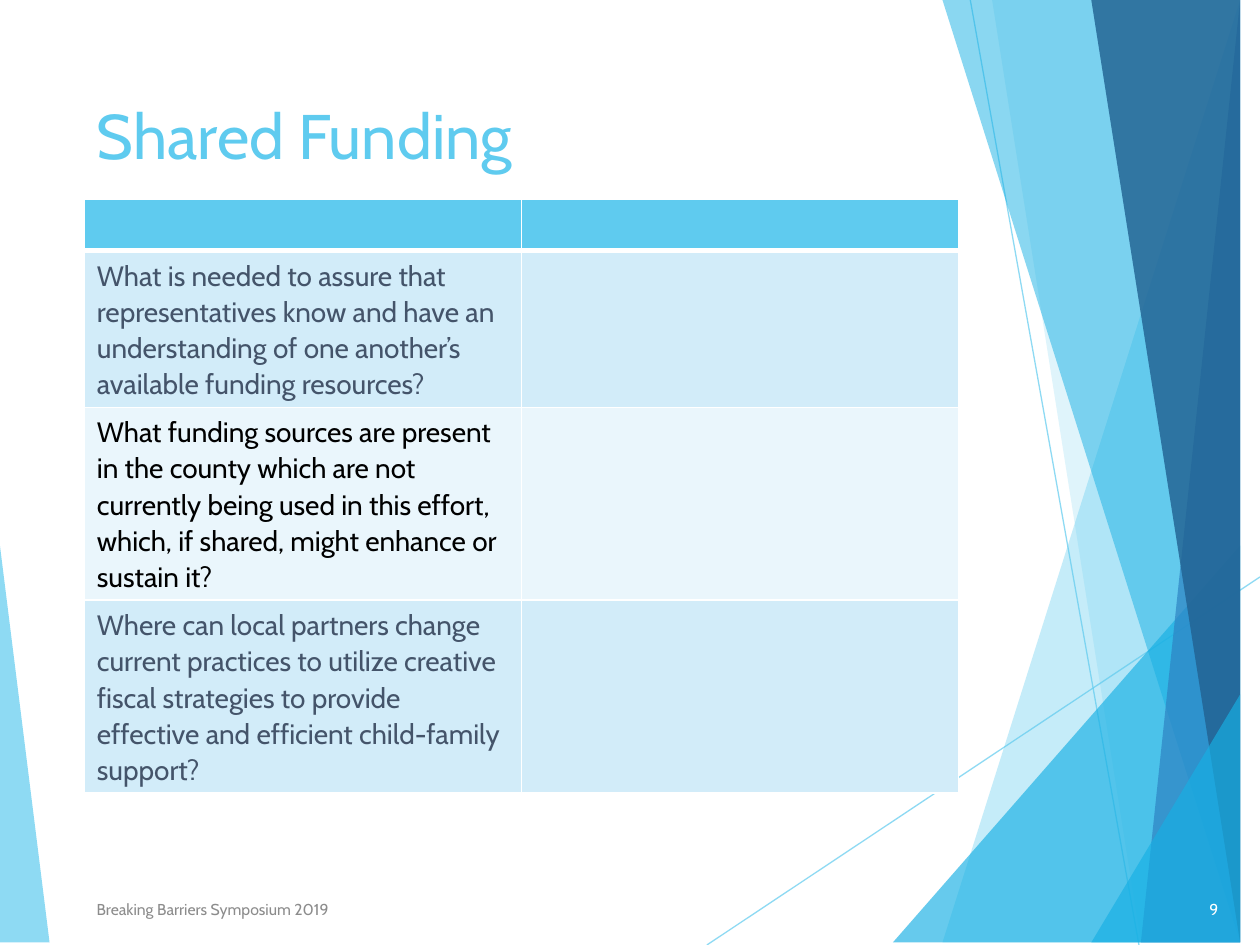
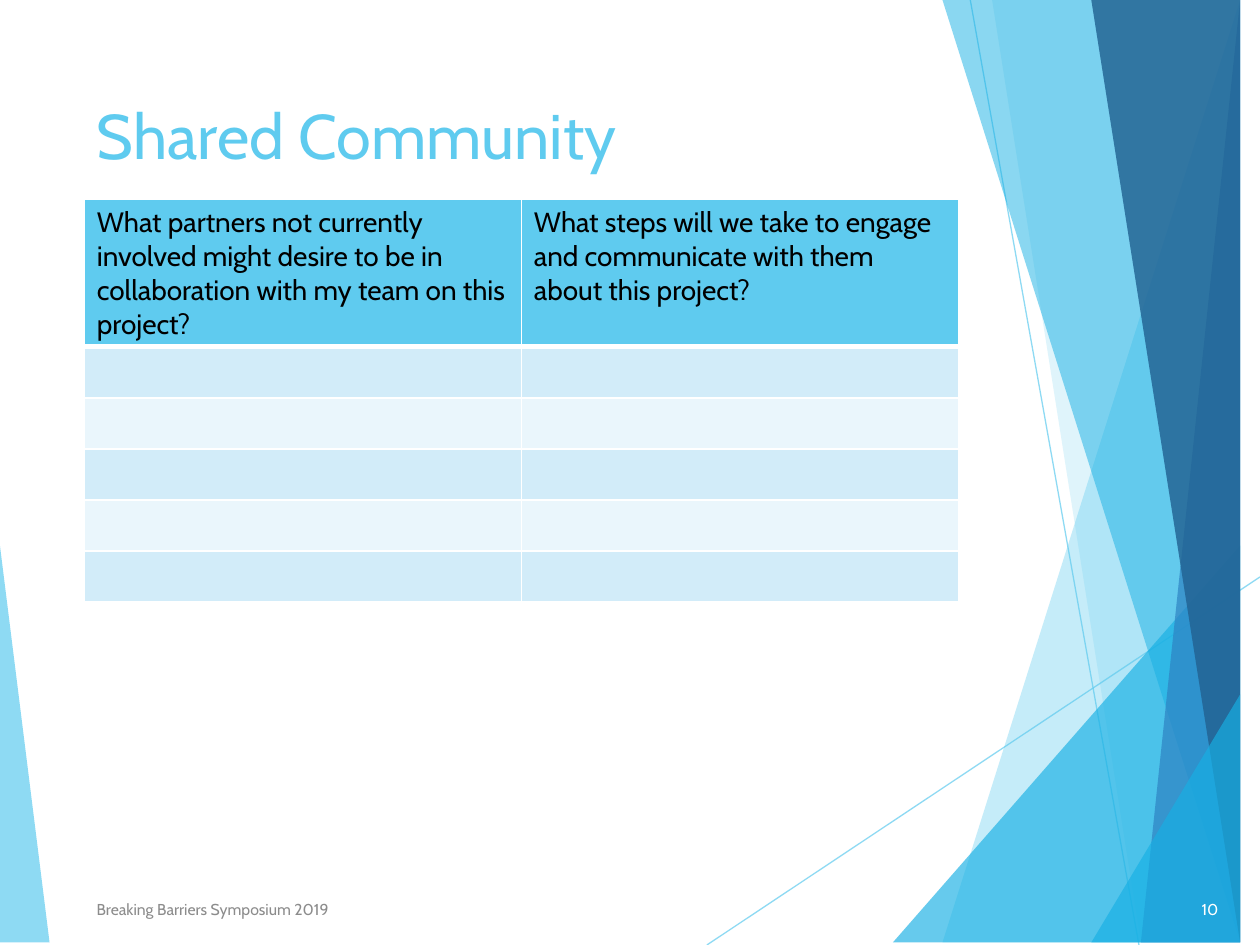
from lxml.etree import SubElement
from pptx import Presentation
from pptx.dml.color import RGBColor
from pptx.enum.shapes import MSO_CONNECTOR
from pptx.enum.text import MSO_ANCHOR, MSO_AUTO_SIZE, PP_ALIGN
from pptx.oxml.ns import qn
from pptx.util import Cm, Pt

FONT = "Cabin"
SKY, AZURE, BLUE, NAVY = "5FCBEF", "17B0E4", "2E83C3", "226292"
BAND_DARK, BAND_LIGHT = "D2ECF9", "EAF6FC"
SLATE, BLACK, WHITE, GREY = "44546A", "000000", "FFFFFF", "8C8C8C"
WIDTH, HEIGHT = 25.4, 19.05
LEFT, COLUMN = 1.7, 8.81
EMPTY_ROW = 1.03


def rgb(value):
    return RGBColor.from_string(value)


def style(font, size, color):
    font.name = FONT
    font.size = Pt(size)
    font.bold = False
    font.color.rgb = rgb(color)


def set_alpha(sp, percent):
    for clr in sp.element.spPr.iter(qn("a:srgbClr")):
        SubElement(clr, qn("a:alpha"), val=str(percent * 1000))


def add_facet(s, points, color, alpha):
    builder = s.shapes.build_freeform(*points[0], scale=Cm(1))
    builder.add_line_segments(points[1:], close=True)
    sp = builder.convert_to_shape()
    sp.shadow.inherit = False
    sp.fill.solid()
    sp.fill.fore_color.rgb = rgb(color)
    sp.line.fill.background()
    set_alpha(sp, alpha)
    return sp


def add_panel(s, top_x, bottom_x, color, alpha):
    points = [(top_x, 0), (bottom_x, HEIGHT), (WIDTH, HEIGHT), (WIDTH, 0)]
    return add_facet(s, points, color, alpha)


def add_corner(s, bottom_x, right_y):
    points = [(bottom_x, HEIGHT), (WIDTH, right_y), (WIDTH, HEIGHT)]
    return add_facet(s, points, AZURE, 66)


def add_ray(s, x1, y1, x2, y2):
    sp = s.shapes.add_connector(MSO_CONNECTOR.STRAIGHT, Cm(x1), Cm(y1), Cm(x2), Cm(y2))
    sp.line.color.rgb = rgb(SKY)
    sp.line.width = Pt(0.75)
    set_alpha(sp, 70)
    SubElement(sp.element.spPr, qn("a:effectLst"))
    return sp


def decorate_layout(layout, s):
    facets = [
        add_facet(s, [(0, 11.15), (1.24, HEIGHT), (0, HEIGHT)], SKY, 70),
        add_ray(s, 14.25, HEIGHT, WIDTH, 11.63),
        add_ray(s, 19.56, 0, 22.96, HEIGHT),
        add_panel(s, 24.76, 19.15, SKY, 36),
        add_panel(s, 20.02, 23.34, SKY, 20),
        add_corner(s, 18.44, 10.9),
        add_panel(s, 19.48, 24.64, AZURE, 50),
        add_panel(s, 24.92, 23.04, BLUE, 70),
        add_panel(s, 22.48, 25.1, NAVY, 82),
        add_corner(s, 22.4, 13.68),
    ]
    for i, sp in enumerate(facets):
        sp.element.xpath(".//p:cNvPr")[0].set("id", str(100 + i))
        layout.shapes.element.insert(2 + i, sp.element)


def set_title(s, text):
    sp = s.shapes.title
    sp.left, sp.top, sp.width, sp.height = Cm(LEFT), Cm(1.7), Cm(2 * COLUMN), Cm(2.01)
    tf = sp.text_frame
    tf.text = text
    tf.auto_size = MSO_AUTO_SIZE.NONE
    tf.vertical_anchor = MSO_ANCHOR.MIDDLE
    p = tf.paragraphs[0]
    p.alignment = PP_ALIGN.LEFT
    style(p.font, 36, SKY)


def add_footer_text(s, text, left, width, color, alignment):
    tf = s.shapes.add_textbox(Cm(left), Cm(17.81), Cm(width), Cm(1.02)).text_frame
    tf.word_wrap = True
    tf.vertical_anchor = MSO_ANCHOR.MIDDLE
    p = tf.paragraphs[0]
    p.text = text
    p.alignment = alignment
    style(p.font, 9, color)


def set_borders(cell, top, bottom):
    tc_pr = cell._tc.get_or_add_tcPr()
    for side, width in (("L", 1), ("R", 1), ("T", top), ("B", bottom)):
        ln = SubElement(tc_pr, qn(f"a:ln{side}"), w=str(Pt(width)))
        fill = SubElement(ln, qn("a:solidFill"))
        SubElement(fill, qn("a:srgbClr"), val=WHITE)


def fill_cell(cell, row, text, color, spacing):
    set_borders(cell, 3 if row == 1 else 1, 3 if row == 0 else 1)
    cell.fill.solid()
    band = BAND_DARK if row % 2 else BAND_LIGHT
    cell.fill.fore_color.rgb = rgb(band if row else SKY)
    if text:
        p = cell.text_frame.paragraphs[0]
        p.line_spacing = spacing
        r = p.add_run()
        r.text = text
        style(r.font, 16, color)


def add_question_table(s, rows, heights, colors, spacing):
    frame = s.shapes.add_table(len(rows), 2, Cm(LEFT), Cm(4.02),
                               Cm(2 * COLUMN), Cm(sum(heights)))
    table = frame.table
    for column in table.columns:
        column.width = Cm(COLUMN)
    for i, (texts, height, color) in enumerate(zip(rows, heights, colors)):
        table.rows[i].height = Cm(height)
        for j, text in enumerate(texts):
            fill_cell(table.cell(i, j), i, text, color, spacing)


def add_question_slide(prs, layout, title, number):
    s = prs.slides.add_slide(layout)
    set_title(s, title)
    add_footer_text(s, "Breaking Barriers Symposium 2019", LEFT, 12.85, GREY, PP_ALIGN.LEFT)
    add_footer_text(s, str(number), 23.39, 1.42, WHITE, PP_ALIGN.RIGHT)
    return s


def main():
    prs = Presentation()
    prs.slide_width, prs.slide_height = Cm(WIDTH), Cm(HEIGHT)
    layout = prs.slide_layouts[5]

    funding = add_question_slide(prs, layout, "Shared Funding", 9)
    decorate_layout(layout, funding)
    funding_rows = [
        ("", ""),
        ("What is needed to assure that representatives know and have an "
         "understanding of one another’s available funding resources?", ""),
        ("What funding sources are present in the county which are not currently "
         "being used in this effort, which, if shared, might enhance or sustain it?", ""),
        ("Where can local partners change current practices to utilize creative fiscal "
         "strategies to provide effective and efficient child-family support?", ""),
    ]
    add_question_table(funding, funding_rows, [EMPTY_ROW, 3.16, 3.89, 3.89],
                       [BLACK, SLATE, BLACK, SLATE], 1.07)

    community = add_question_slide(prs, layout, "Shared Community", 10)
    community_rows = [
        ("What partners not currently involved might desire to be in "
         "collaboration with my team on this project?",
         "What steps will we take to engage and communicate with them about this project?"),
    ] + [("", "")] * 5
    add_question_table(community, community_rows, [2.97] + [EMPTY_ROW] * 5, [BLACK] * 6, 1.0)

    prs.save("out.pptx")


if __name__ == "__main__":
    main()
